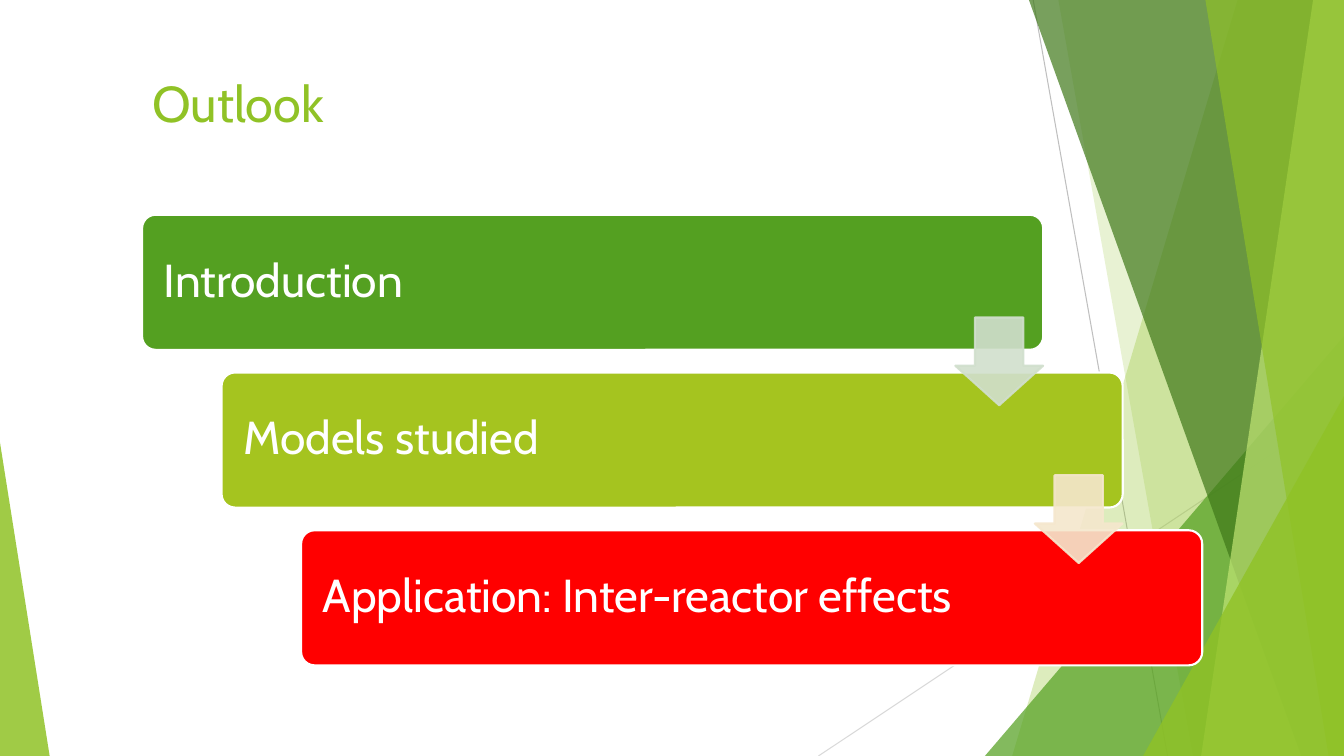
from lxml import etree
from pptx import Presentation
from pptx.dml.color import RGBColor
from pptx.enum import shapes, text
from pptx.oxml import ns
from pptx.util import Pt

WHITE = RGBColor(0xFF, 0xFF, 0xFF)
LEAF = RGBColor(0x90, 0xC2, 0x26)
GREEN = RGBColor(0x54, 0xA0, 0x21)
FOREST = RGBColor(0x3F, 0x78, 0x19)
PALE = RGBColor(0xC0, 0xE4, 0x74)
LIME = RGBColor(0xA5, 0xC4, 0x1F)
RED = RGBColor(0xFF, 0x00, 0x00)
MINT = RGBColor(0xD1, 0xDF, 0xCD)
CREAM = RGBColor(0xF5, 0xE7, 0xCD)
GREY = RGBColor(0xBF, 0xBF, 0xBF)
SILVER = RGBColor(0xD9, 0xD9, 0xD9)

WIDTH, HEIGHT = 960, 540
TITLE = "Outlook"
STEPS = [
    ("Introduction", GREEN),
    ("Models studied", LIME),
    ("Application: Inter-reactor effects", RED),
]
ARROW_COLORS = [MINT, CREAM]

RAYS = [((738, 0), (834, HEIGHT), GREY), ((WIDTH, 290), (584.6, HEIGHT), SILVER)]
FACETS = [
    ("band", (884, 723), LEAF, 30),
    ("band", (756, 852), LEAF, 20),
    ("corner", (703.5, 240, 256.5, 300, 1), GREEN, 72),
    ("band", (735, 929.5), FOREST, 70),
    ("band", (938, 858), PALE, 70),
    ("band", (861, 949), LEAF, 65),
    ("corner", (816.5, 283, 143.5, 257, 1), LEAF, 80),
    ("corner", (0, 316, 35.5, 224, 0), LEAF, 85),
]

BAR = {"left": 101.5, "top": 153.4, "width": 643.7, "height": 96.5}
STEP_X, STEP_Y = 56.8, 112.7
ARROW_LEFT, ARROW_TOP, ARROW_SIZE = 682.4, 226.8, 62.7
TITLE_BOX = {"left": 101.5, "top": 48.2, "width": 803, "height": 86.4}
TITLE_FONT = {"name": "Cabin", "size": Pt(36)}
BAR_FONT = {"name": "Cabin", "size": Pt(33)}
BAR_FRAME = {
    "word_wrap": True,
    "vertical_anchor": text.MSO_ANCHOR.MIDDLE,
    "margin_left": Pt(12.7),
    "margin_right": Pt(12.7),
    "margin_top": Pt(12.7),
    "margin_bottom": Pt(12.7),
}
BAR_PARAGRAPH = {"alignment": text.PP_ALIGN.LEFT, "line_spacing": 0.9}


def apply(target, values):
    for key, value in values.items():
        setattr(target, key, value)


def set_alpha(color_format_owner, percent):
    for color in color_format_owner.iter(ns.qn("a:srgbClr")):
        etree.SubElement(color, ns.qn("a:alpha"), val=str(percent * 1000))


def paint(part, fill, line=None, alpha=100):
    part.shadow.inherit = False
    part.fill.solid()
    part.fill.fore_color.rgb = fill
    if line is None:
        part.line.fill.background()
    else:
        part.line.color.rgb = line
        part.line.width = Pt(1.5)
    if alpha < 100:
        set_alpha(part._element.spPr, alpha)


def add_preset(slide, kind, box, adjustments):
    part = slide.shapes.add_shape(kind, *(Pt(length) for length in box))
    for index, value in enumerate(adjustments):
        part.adjustments[index] = value
    return part


def add_band(slide, top_x, bottom_x):
    outline = [(WIDTH, 0), (WIDTH, HEIGHT), (bottom_x, HEIGHT)]
    builder = slide.shapes.build_freeform(Pt(top_x), 0)
    builder.add_line_segments([(Pt(x), Pt(y)) for x, y in outline], close=True)
    return builder.convert_to_shape()


def add_backdrop(slide):
    for start, end, color in RAYS:
        ray = slide.shapes.add_connector(
            shapes.MSO_CONNECTOR.STRAIGHT, *(Pt(n) for n in start + end))
        ray.line.color.rgb = color
        ray.line.width = Pt(0.75)
        etree.SubElement(ray._element.spPr, ns.qn("a:effectLst"))
    for kind, geometry, color, alpha in FACETS:
        if kind == "band":
            facet = add_band(slide, *geometry)
        else:
            facet = add_preset(slide, shapes.MSO_SHAPE.ISOSCELES_TRIANGLE,
                               geometry[:4], geometry[4:])
        paint(facet, color, alpha=alpha)


def add_title(slide):
    title = slide.shapes.title
    slide.shapes._spTree.append(title._element)
    apply(title, {key: Pt(value) for key, value in TITLE_BOX.items()})
    title.text_frame.text = TITLE
    title.text_frame.vertical_anchor = text.MSO_ANCHOR.TOP
    heading = title.text_frame.paragraphs[0]
    heading.alignment = text.PP_ALIGN.LEFT
    apply(heading.font, TITLE_FONT)
    heading.font.color.rgb = LEAF


def add_steps(slide):
    for index, (label, color) in enumerate(STEPS):
        box = (BAR["left"] + index * STEP_X, BAR["top"] + index * STEP_Y,
               BAR["width"], BAR["height"])
        bar = add_preset(slide, shapes.MSO_SHAPE.ROUNDED_RECTANGLE, box, [0.1])
        paint(bar, color, WHITE)
        apply(bar.text_frame, BAR_FRAME)
        bar.text_frame.text = label
        caption = bar.text_frame.paragraphs[0]
        apply(caption, BAR_PARAGRAPH)
        apply(caption.font, BAR_FONT)
        caption.font.color.rgb = WHITE
    for index, color in enumerate(ARROW_COLORS):
        box = (ARROW_LEFT + index * STEP_X, ARROW_TOP + index * STEP_Y,
               ARROW_SIZE, ARROW_SIZE)
        arrow = add_preset(slide, shapes.MSO_SHAPE.DOWN_ARROW, box, [0.55, 0.45])
        paint(arrow, color, color, 90)


def main():
    deck = Presentation()
    apply(deck, {"slide_width": Pt(WIDTH), "slide_height": Pt(HEIGHT)})
    slide = deck.slides.add_slide(deck.slide_layouts[5])
    add_backdrop(slide)
    add_title(slide)
    add_steps(slide)
    deck.save("out.pptx")


if __name__ == "__main__":
    main()
